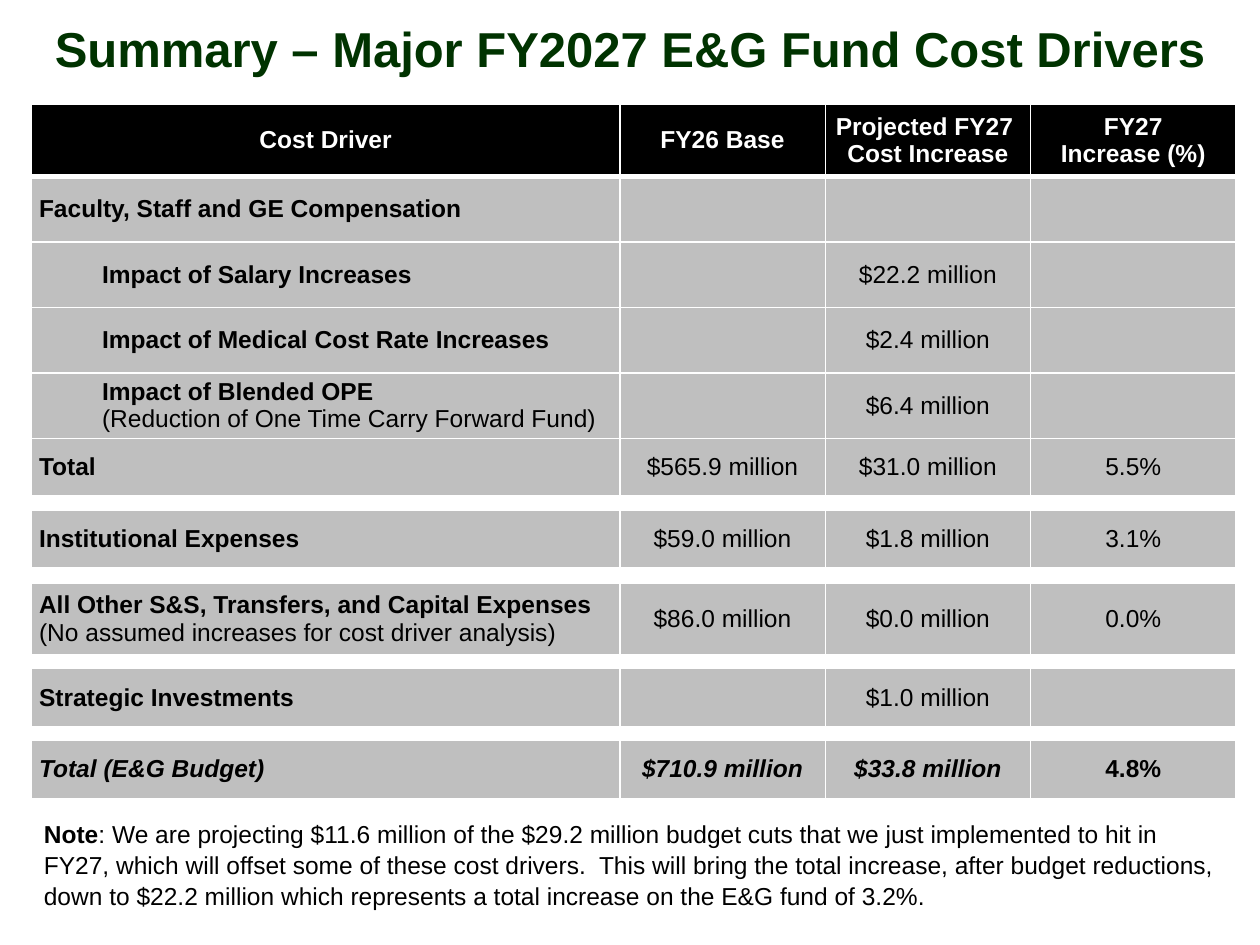
from lxml import etree
from pptx import Presentation
from pptx.dml.color import RGBColor
from pptx.enum.text import MSO_ANCHOR, PP_ALIGN
from pptx.oxml.ns import qn
from pptx.util import Inches, Pt

LEFT, CENTER = PP_ALIGN.LEFT, PP_ALIGN.CENTER
MIDDLE, TOP = MSO_ANCHOR.MIDDLE, MSO_ANCHOR.TOP

BLACK = RGBColor(0, 0, 0)
WHITE = RGBColor(255, 255, 255)
GRAY = RGBColor(0xBF, 0xBF, 0xBF)
GREEN = RGBColor(0, 0x33, 0)
FONT = "Arial"

COLS = [4.67, 1.63, 1.63, 1.63]
HEAD = ["Cost Driver", "FY26 Base", "Projected FY27  Cost Increase",
        "FY27\nIncrease (%)"]
STEP = 0.5  # indent of the compensation items

# Each row: height, label runs (text, style), values, value styles, indent
ROWS = [
    (0.52, [("Faculty, Staff and GE Compensation", "b")], ["", "", ""], 0),
    (0.52, [("Impact of Salary Increases", "b")], ["", "$22.2 million", ""], STEP),
    (0.52, [("Impact of Medical Cost Rate Increases", "b")],
     ["", "$2.4 million", ""], STEP),
    (0.52, [("Impact of Blended OPE\n", "b"),
            ("(Reduction of One Time Carry Forward Fund)", "")],
     ["", "$6.4 million", ""], STEP),
    (0.46, [("Total", "b")], ["$565.9 million", "$31.0 million", "5.5%"], 0),
    (0.11, None, None, 0),
    (0.46, [("Institutional Expenses", "b")],
     ["$59.0 million", "$1.8 million", "3.1%"], 0),
    (0.12, None, None, 0),
    (0.57, [("All Other S&S, Transfers, and Capital Expenses  ", "b"),
            ("(No assumed increases for cost driver analysis)", "")],
     ["$86.0 million", "$0.0 million", "0.0%"], 0),
    (0.11, None, None, 0),
    (0.46, [("Strategic Investments", "b")], ["", "$1.0 million", ""], 0),
    (0.11, None, None, 0),
    (0.46, [("Total (E&G Budget)", "bi")],
     [("$710.9 million", "bi"), ("$33.8 million", "bi"), ("4.8%", "b")], 0),
]

NOTE = [("Note", "b"), (
    ": We are projecting $11.6 million of the $29.2 million budget cuts that we "
    "just implemented to hit in FY27, which will offset some of these cost "
    "drivers.  This will bring the total increase, after budget reductions, down "
    "to $22.2 million which represents a total increase on the E&G fund of 3.2%.",
    "")]


def put_text(frame, runs, size=14, color=BLACK, align=LEFT, indent=0, space=None):
    """Write (text, style) runs; a newline starts a paragraph, style is b and/or i."""
    para = frame.paragraphs[0]
    paras = [para]
    for text, style in runs:
        for i, part in enumerate(text.split("\n")):
            if i:
                para = frame.add_paragraph()
                paras.append(para)
            if part:
                run = para.add_run()
                run.text = part
                font = run.font
                font.name, font.size = FONT, Pt(size)
                font.bold, font.italic = "b" in style, "i" in style
                font.color.rgb = color
    for para in paras:
        para.alignment = align
        para.line_spacing = space
        if indent:
            para.level = 1
            props = para._p.get_or_add_pPr()
            props.set("marL", str(Inches(indent)))
            props.set("indent", "0")


def add_box(slide, left, top, width, height, runs, pad=(0.1, 0.05),
            anchor=TOP, **style):
    box = slide.shapes.add_textbox(
        Inches(left), Inches(top), Inches(width), Inches(height))
    frame = box.text_frame
    frame.word_wrap = True
    frame.vertical_anchor = anchor
    frame.margin_left = frame.margin_right = Inches(pad[0])
    frame.margin_top = frame.margin_bottom = Inches(pad[1])
    put_text(frame, runs, **style)


def edge_cell(cell, base=1):
    """Draw white borders round a cell, the lower one base points wide."""
    props = cell._tc.get_or_add_tcPr()
    for tag, width in (("lnL", 1), ("lnR", 1), ("lnT", 1), ("lnB", base)):
        line = etree.SubElement(props, qn("a:" + tag), w=str(Pt(width)))
        fill = etree.SubElement(line, qn("a:solidFill"))
        etree.SubElement(fill, qn("a:srgbClr"), val=str(WHITE))


def fill_cell(cell, runs, back, base=1, **style):
    edge_cell(cell, base)
    cell.fill.solid()
    cell.fill.fore_color.rgb = back
    cell.vertical_anchor = MIDDLE
    cell.margin_left = cell.margin_right = Inches(0.06)
    cell.margin_top = cell.margin_bottom = Inches(0.03)
    put_text(cell.text_frame, runs, **style)


def clear_cell(cell):
    """Make a thin gap between blocks of rows."""
    edge_cell(cell)
    cell.fill.background()
    cell.margin_top = cell.margin_bottom = 0
    cell.text_frame.paragraphs[0].font.size = Pt(4)


def add_costs(slide):
    tall = [0.57] + [row[0] for row in ROWS]
    table = slide.shapes.add_table(
        len(tall), len(COLS), Inches(0.25), Inches(0.83),
        Inches(sum(COLS)), Inches(sum(tall))).table
    table.first_row = table.horz_banding = False
    for col, width in zip(table.columns, COLS):
        col.width = Inches(width)
    for row, height in zip(table.rows, tall):
        row.height = Inches(height)

    for col, text in enumerate(HEAD):
        fill_cell(table.cell(0, col), [(text, "b")], BLACK, base=3,
                  color=WHITE, align=CENTER)
    for row, (_, label, values, indent) in enumerate(ROWS, 1):
        if label is None:
            for col in range(len(COLS)):
                clear_cell(table.cell(row, col))
            continue
        fill_cell(table.cell(row, 0), label, GRAY, indent=indent)
        for col, value in enumerate(values, 1):
            run = (value, "") if isinstance(value, str) else value
            fill_cell(table.cell(row, col), [run], GRAY, align=CENTER)


def main():
    deck = Presentation()
    deck.slide_width, deck.slide_height = Inches(10), Inches(7.5)
    slide = deck.slides.add_slide(deck.slide_layouts[6])
    add_costs(slide)
    add_box(slide, 0.25, 6.44, 9.56, 0.81, NOTE, space=1.05)
    add_box(slide, 0.22, 0.04, 9.56, 0.68,
            [("Summary – Major FY2027 E&G Fund Cost Drivers", "b")],
            pad=(0.07, 0.04), anchor=MIDDLE, size=28, color=GREEN, align=CENTER)
    deck.save("out.pptx")


if __name__ == "__main__":
    main()
